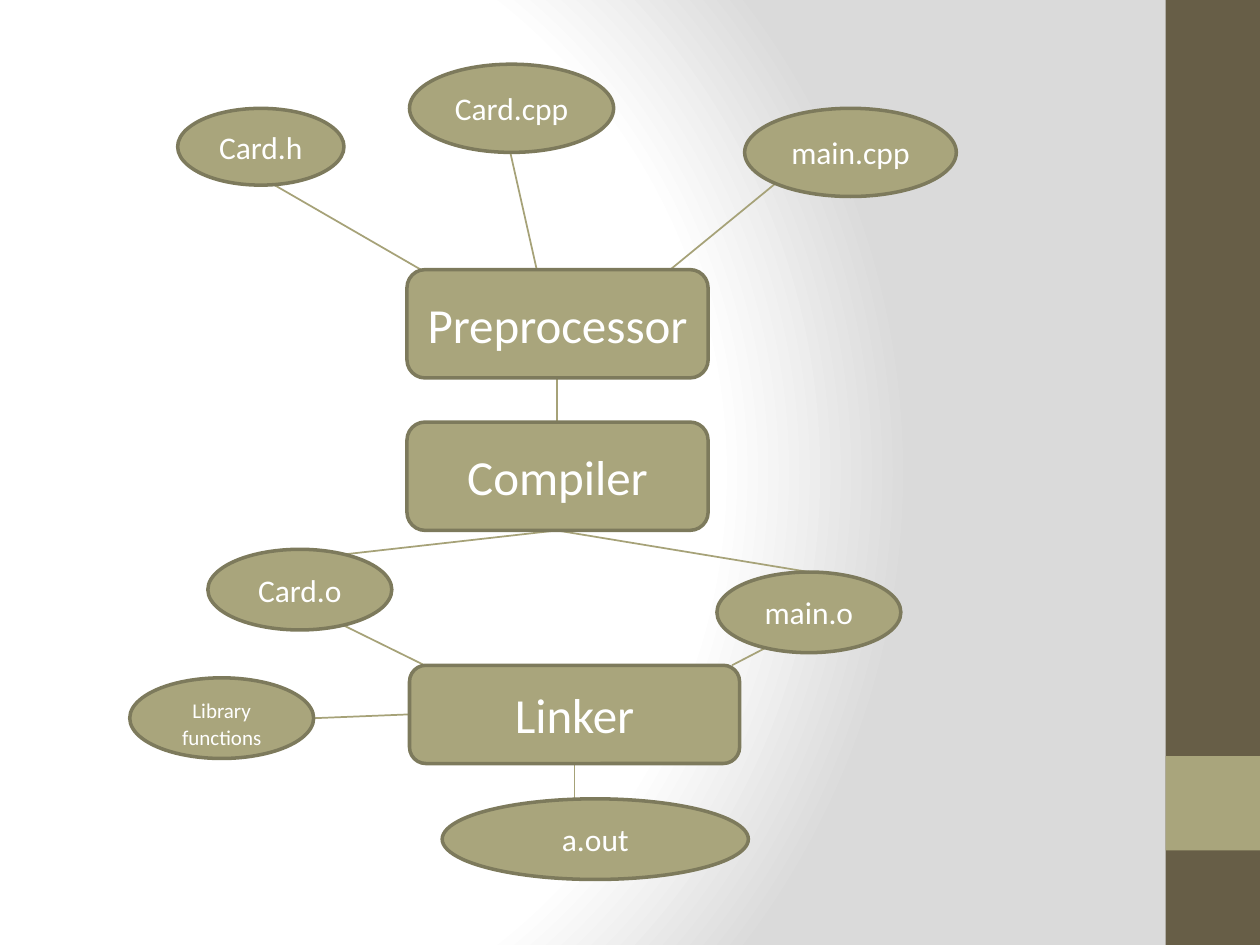
from lxml import etree
from pptx import Presentation
from pptx.dml.color import RGBColor
from pptx.enum.shapes import MSO_CONNECTOR, MSO_SHAPE
from pptx.enum.text import MSO_ANCHOR, PP_ALIGN
from pptx.oxml import parse_xml
from pptx.oxml.ns import qn
from pptx.util import Inches, Pt

RECT = MSO_SHAPE.RECTANGLE
OVAL = MSO_SHAPE.OVAL
ROUND = MSO_SHAPE.ROUNDED_RECTANGLE
LINE = MSO_CONNECTOR.STRAIGHT
MIDDLE = MSO_ANCHOR.MIDDLE
CENTER = PP_ALIGN.CENTER

HEX = {"white": "FFFFFF", "gray": "DADADA", "brown": "675E47",
       "sage": "A9A57C", "edge": "7D7A5C", "link": "A6A278"}
RGB = {name: RGBColor.from_string(code) for name, code in HEX.items()}

deck = Presentation()
deck.slide_width = Inches(10)
deck.slide_height = Inches(7.5)
slide = deck.slides.add_slide(deck.slide_layouts[6])

slide.background.fill.solid()
solid = slide.background._cSld.find(".//" + qn("a:solidFill"))
stops = "".join(
    f'<a:gs pos="{pos * 1000}"><a:srgbClr val="{HEX[name]}"/></a:gs>'
    for pos, name in ((0, "white"), (75, "white"), (100, "gray")))
solid.getparent().replace(solid, parse_xml(
    '<a:gradFill xmlns:a="http://schemas.openxmlformats.org/drawingml/2006/main"'
    f' rotWithShape="1"><a:gsLst>{stops}</a:gsLst><a:path path="circle">'
    '<a:fillToRect l="20000" t="50000" r="100000" b="50000"/>'
    '</a:path></a:gradFill>'))


def add_box(kind, box, fill):
    shape = slide.shapes.add_shape(kind, *map(Inches, box))
    shape.shadow.inherit = False
    shape.fill.solid()
    shape.fill.fore_color.rgb = RGB[fill]
    shape.line.fill.background()
    return shape


add_box(RECT, (9.25, 0, 0.75, 7.5), "brown")
add_box(RECT, (9.25, 6, 0.75, 0.75), "sage")

links = [
    (2.18, 1.47, 3.34, 2.14),
    (4.05, 1.21, 4.26, 2.14),
    (6.15, 1.46, 5.32, 2.14),
    (4.42, 3, 4.42, 3.35),
    (4.42, 4.21, 2.73, 4.4),
    (4.42, 4.21, 6.42, 4.54),
    (2.72, 4.96, 3.37, 5.28),
    (6.08, 5.14, 5.81, 5.28),
    (2.49, 5.7, 3.25, 5.67),
    (4.56, 6.06, 4.56, 6.35),
]
for ends in links:
    link = slide.shapes.add_connector(LINE, *map(Inches, ends))
    link.line.color.rgb = RGB["link"]
    link.line.width = Pt(1)
    etree.SubElement(link._element.spPr, qn("a:effectLst"))

nodes = [
    (OVAL, "Card.h", 18, (1.41, 0.86, 1.32, 0.61)),
    (OVAL, "Card.cpp", 18, (3.25, 0.51, 1.62, 0.7)),
    (OVAL, "main.cpp", 18, (5.91, 0.86, 1.68, 0.7)),
    (ROUND, "Compiler", 28, (3.23, 3.35, 2.39, 0.86)),
    (ROUND, "Preprocessor", 28, (3.23, 2.14, 2.39, 0.86)),
    (OVAL, "Card.o", 18, (1.65, 4.36, 1.46, 0.64)),
    (OVAL, "Library functions", 12, (1.03, 5.38, 1.46, 0.64)),
    (ROUND, "Linker", 28, (3.25, 5.28, 2.62, 0.78)),
    (OVAL, "main.o", 18, (5.69, 4.54, 1.46, 0.64)),
    (OVAL, "a.out", 18, (3.51, 6.34, 2.43, 0.64)),
]
for kind, label, size, box in nodes:
    node = add_box(kind, box, "sage")
    node.line.color.rgb = RGB["edge"]
    node.line.width = Pt(2)
    frame = node.text_frame
    frame.word_wrap = True
    frame.vertical_anchor = MIDDLE
    para = frame.paragraphs[0]
    para.alignment = CENTER
    para.font.name = "Calibri"
    para.font.size = Pt(size)
    para.font.color.rgb = RGB["white"]
    for part in filter(None, label.partition(" ")):
        run = para.add_run()
        run.text = part
        if part == " ":
            run.font.size = Pt(18)

deck.save("out.pptx")
